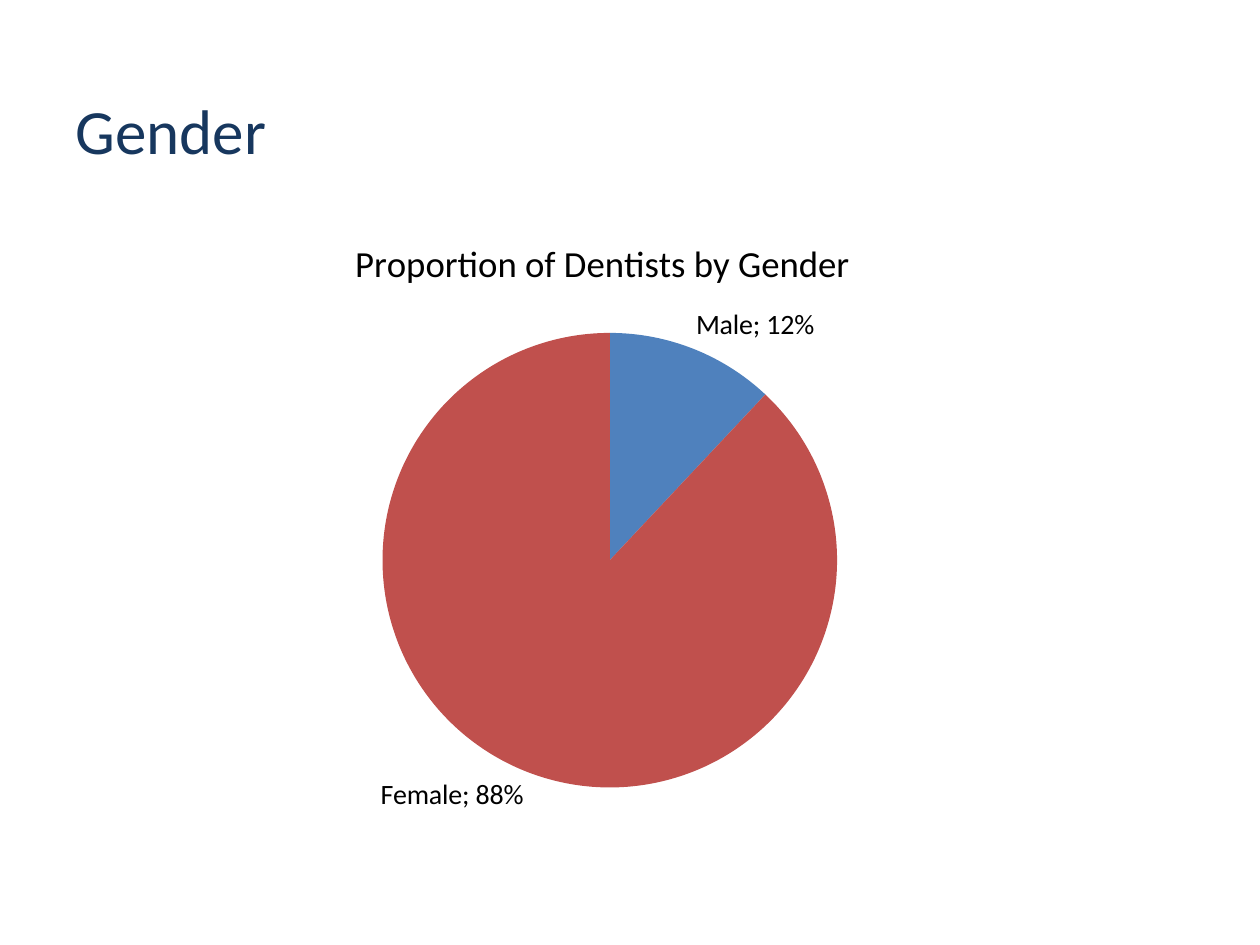
from dataclasses import dataclass

import pptx
import pptx.chart.data
import pptx.dml.color
import pptx.enum.chart
import pptx.enum.text
import pptx.oxml
import pptx.oxml.ns
import pptx.util
from pptx.util import Inches


@dataclass(frozen=True)
class Theme:
    font: str = "Calibri"
    heading: str = "17375E"
    text: str = "000000"
    slices: tuple = ("4F81BD", "C0504D")
    heading_size: int = 36
    chart_title_size: int = 21
    label_size: int = 16
    chart_size: int = 10


theme = Theme()


def style_font(font, size, color):
    font.name = theme.font
    font.size = pptx.util.Pt(size)
    font.bold = False
    font.color.rgb = pptx.dml.color.RGBColor.from_string(color)


def manual_layout(target="", **fractions):
    """Return a c:layout element placed by fractions of the chart area."""
    modes = "".join(f'<c:{axis}Mode val="edge"/>' for axis in "xy")
    places = "".join(f'<c:{key} val="{value}"/>' for key, value in fractions.items())
    return pptx.oxml.parse_xml(
        f'<c:layout {pptx.oxml.ns.nsdecls("c")}><c:manualLayout>'
        f"{target}{modes}{places}</c:manualLayout></c:layout>"
    )


deck = pptx.Presentation()
deck.slide_width, deck.slide_height = Inches(10), Inches(7.5)
page = deck.slides.add_slide(deck.slide_layouts[5])

# Slide title
heading = page.shapes.title
heading.left, heading.top = Inches(0.5), Inches(0.41)
heading.width, heading.height = Inches(6.08), Inches(1.23)
heading.text_frame.text = "Gender"
heading.text_frame.vertical_anchor = pptx.enum.text.MSO_ANCHOR.MIDDLE
paragraph = heading.text_frame.paragraphs[0]
paragraph.alignment = pptx.enum.text.PP_ALIGN.LEFT
style_font(paragraph.font, theme.heading_size, theme.heading)

# Pie chart
data = pptx.chart.data.CategoryChartData(number_format="0%")
data.categories = ["Male", "Female"]
data.add_series("Series 1", [0.12, 0.88])
chart = page.shapes.add_chart(
    pptx.enum.chart.XL_CHART_TYPE.PIE,
    Inches(0.24), Inches(1.63), Inches(9.02), Inches(5.03), data,
).chart
style_font(chart.font, theme.chart_size, theme.text)
chart.has_legend = False

# Chart title
chart.has_title = True
chart.chart_title.text_frame.text = "Proportion of Dentists by Gender"
style_font(chart.chart_title.text_frame.paragraphs[0].font,
           theme.chart_title_size, theme.text)
title_xml = chart.chart_title._element
for layout in title_xml.findall(pptx.oxml.ns.qn("c:layout")):
    title_xml.remove(layout)
title_xml.find(pptx.oxml.ns.qn("c:tx")).addnext(manual_layout(x=0.28, y=0.04))
chart.chart_title.include_in_layout = False

# Plot position
plot_xml = chart._chartSpace.chart.plotArea
for layout in plot_xml.findall(pptx.oxml.ns.qn("c:layout")):
    plot_xml.remove(layout)
plot_xml.insert(0, manual_layout('<c:layoutTarget val="inner"/>',
                                 x=0.31, y=0.2, w=0.4, h=0.72))

# Slices and labels
plot = chart.plots[0]
plot.vary_by_categories = True
series = plot.series[0]
for index, color in enumerate(theme.slices):
    fill = series.points[index].format.fill
    fill.solid()
    fill.fore_color.rgb = pptx.dml.color.RGBColor.from_string(color)

labels = series.data_labels
labels.show_value = True
labels.show_category_name = True
labels.show_percentage = False
labels.show_legend_key = False
labels.number_format = "0%"
labels.number_format_is_linked = False
labels.position = pptx.enum.chart.XL_LABEL_POSITION.OUTSIDE_END
style_font(labels.font, theme.label_size, theme.text)
separator = pptx.oxml.parse_xml(
    f'<c:separator {pptx.oxml.ns.nsdecls("c")}>; </c:separator>')
labels._element.find(pptx.oxml.ns.qn("c:showBubbleSize")).addnext(separator)

deck.save("out.pptx")
